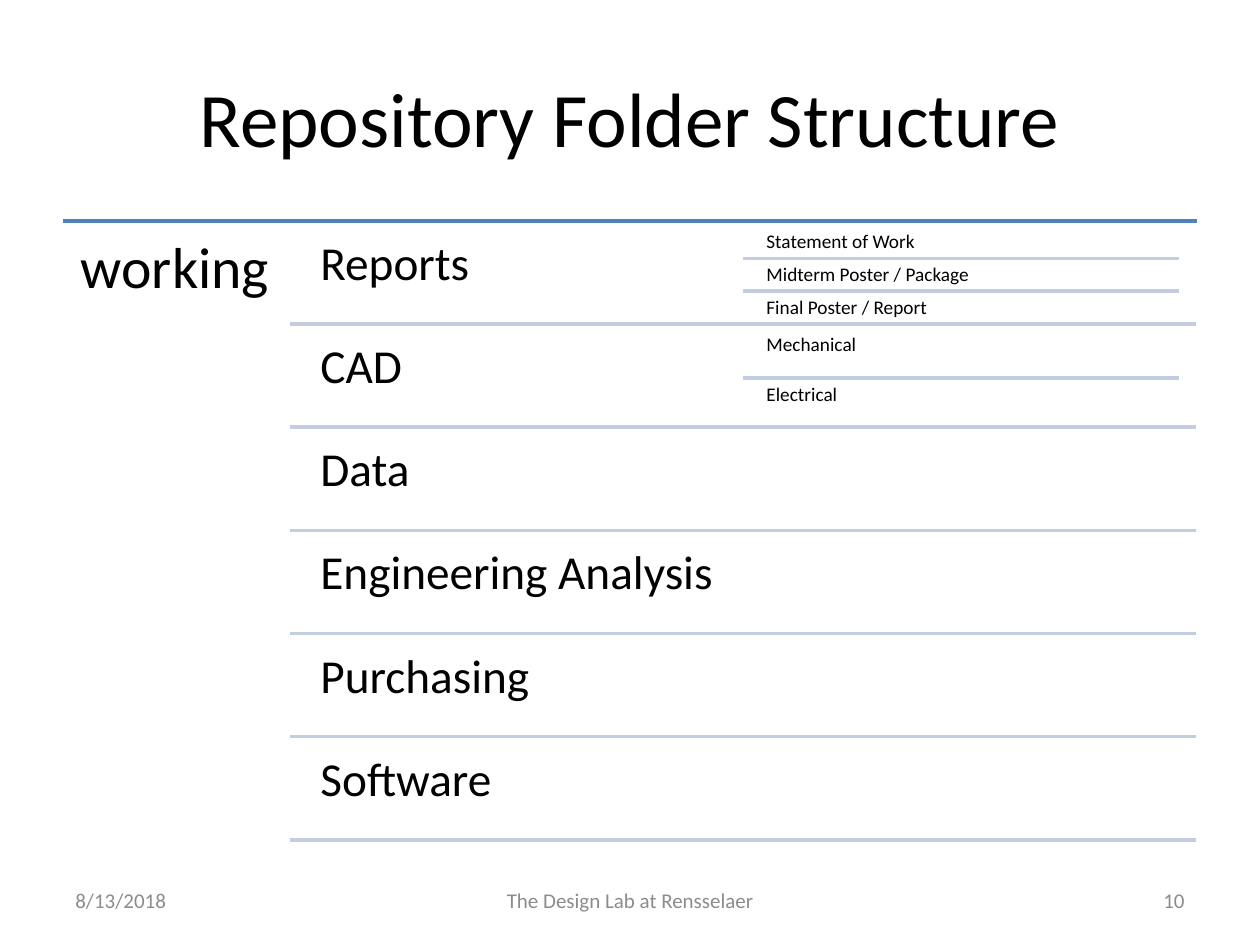
import pptx
import pptx.util
import pptx.dml.color
import pptx.enum.shapes
import pptx.enum.text
import pptx.oxml.ns
import lxml.etree
from dataclasses import dataclass

Cm = pptx.util.Cm
Pt = pptx.util.Pt
Align = pptx.enum.text.PP_ALIGN
Anchor = pptx.enum.text.MSO_ANCHOR


@dataclass
class Theme:
    font: str = "Calibri"
    ink: str = "000000"
    gray: str = "8C8C8C"
    blue: str = "4F81BD"
    pale: str = "C2CDE1"
    title: int = 44
    root: int = 33
    folder: int = 27
    item: int = 11
    foot: int = 12


def apply(target, values):
    for name, value in values.items():
        setattr(target, name, value)


class Page:
    def __init__(self, deck, theme):
        self.theme = theme
        self.slide = deck.slides.add_slide(deck.slide_layouts[5])

    def fill(self, frame, text, size, color, align, anchor, space=1.0):
        apply(frame, {"word_wrap": True, "vertical_anchor": anchor,
                      "auto_size": pptx.enum.text.MSO_AUTO_SIZE.NONE})
        para = frame.paragraphs[0]
        apply(para, {"text": text, "alignment": align, "line_spacing": space})
        font = para.runs[0].font
        apply(font, {"name": self.theme.font, "size": Pt(size), "bold": False})
        font.color.rgb = pptx.dml.color.RGBColor.from_string(color)

    def title(self, text, left, top, width, height):
        shape = self.slide.shapes.title
        apply(shape, {"left": Cm(left), "top": Cm(top),
                      "width": Cm(width), "height": Cm(height)})
        self.fill(shape.text_frame, text, self.theme.title, self.theme.ink,
                  Align.CENTER, Anchor.MIDDLE)

    def box(self, left, top, width, height):
        return self.slide.shapes.add_textbox(
            Cm(left), Cm(top), Cm(width), Cm(height)).text_frame

    def label(self, text, left, top, width, height, size, inset):
        frame = self.box(left, top, width, height)
        sides = ("left", "top", "right", "bottom")
        apply(frame, {f"margin_{side}": Cm(inset) for side in sides})
        self.fill(frame, text, size, self.theme.ink, Align.LEFT, Anchor.TOP, 0.9)

    def foot(self, text, left, width, align):
        self.fill(self.box(left, 17.65, width, 1.01), text, self.theme.foot,
                  self.theme.gray, align, Anchor.MIDDLE)

    def rule(self, left, right, top, color):
        line = self.slide.shapes.add_connector(
            pptx.enum.shapes.MSO_CONNECTOR.STRAIGHT,
            Cm(left), Cm(top), Cm(right), Cm(top))
        line.line.width = Pt(2)
        line.line.color.rgb = pptx.dml.color.RGBColor.from_string(color)
        lxml.etree.SubElement(line._element.spPr, pptx.oxml.ns.qn("a:effectLst"))


FOLDERS = {
    "Reports": ["Statement of Work", "Midterm Poster / Package",
                "Final Poster / Report"],
    "CAD": ["Mechanical", "Electrical"],
    "Data": [],
    "Engineering Analysis": [],
    "Purchasing": [],
    "Software": [],
}


def main():
    deck = pptx.Presentation()
    apply(deck, {"slide_width": Cm(25.4), "slide_height": Cm(19.05)})
    theme = Theme()
    page = Page(deck, theme)
    page.title("Repository Folder Structure", 1.27, 0.76, 22.86, 3.18)
    page.rule(1.27, 24.13, 4.45, theme.blue)
    page.label("working", 1.27, 4.45, 4.57, 12.57, theme.root, 0.36)

    first, pitch, height = 4.55, 2.08, 1.98
    for row, (folder, items) in enumerate(FOLDERS.items()):
        top = first + row * pitch
        page.label(folder, 6.18, top, 8.79, height, theme.folder, 0.28)
        for index, item in enumerate(items):
            step = height / len(items)
            level = top + index * step
            page.label(item, 15.32, level, 8.79, step, theme.item, 0.13)
            if index:
                page.rule(14.97, 23.77, level, theme.pale)
        page.rule(5.84, 24.11, top + height, theme.pale)

    page.foot("8/13/2018", 1.27, 5.92, Align.LEFT)
    page.foot("The Design Lab at Rensselaer", 8.68, 8.05, Align.CENTER)
    page.foot("10", 18.21, 5.92, Align.RIGHT)
    deck.save("out.pptx")


if __name__ == "__main__":
    main()
